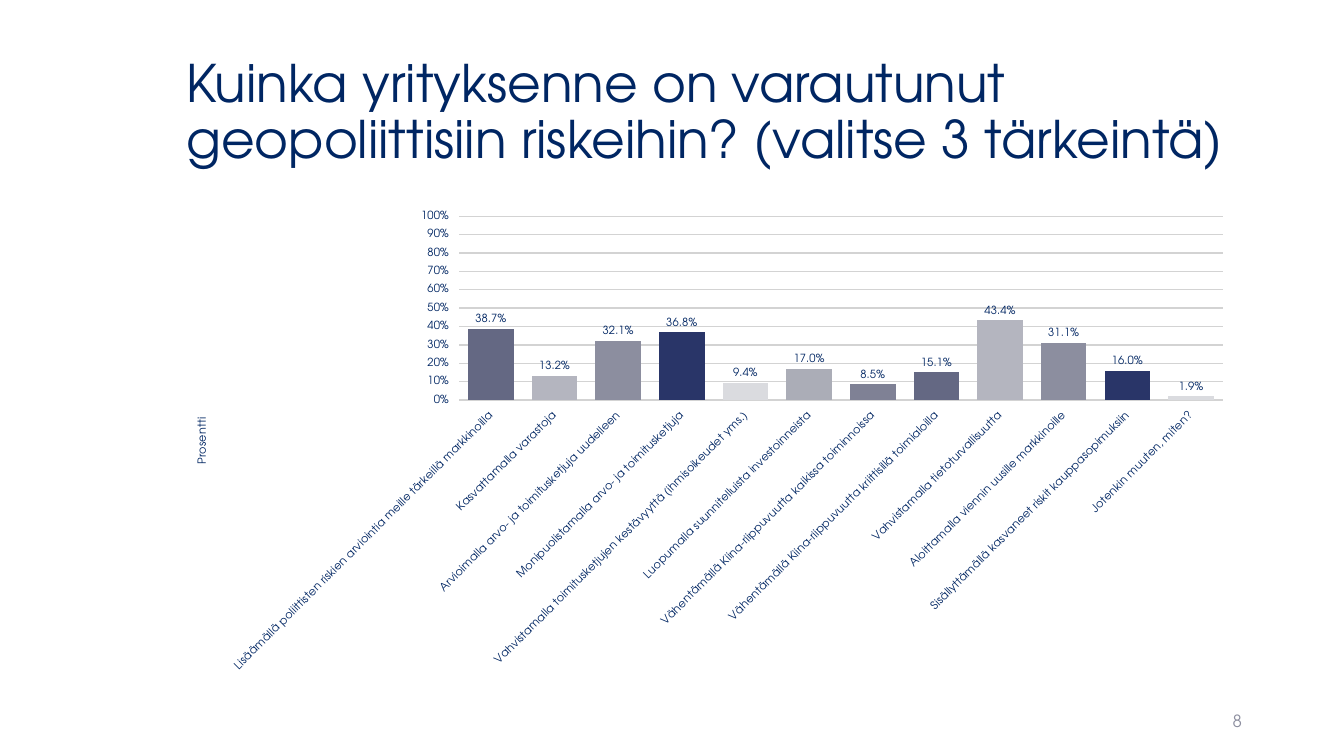
from lxml import etree
from pptx import Presentation
from pptx.chart.data import CategoryChartData
from pptx.dml.color import RGBColor
from pptx.enum import chart as ch, text as tx
from pptx.oxml.ns import qn
from pptx.util import Cm, Pt

FACE = "TeX Gyre Adventor"
NAVY, GREY, GRID = "002663", "8C8E9F", "D3D3D3"
WIDE, HIGH = 26.9, 12.09
BARS = [
    ("Lisäämällä poliittisten riskien arviointia meille tärkeillä markkinoilla", 0.387, "646883"),
    ("Kasvattamalla varastoja", 0.132, "B4B5BF"),
    ("Arvioimalla arvo- ja toimitusketjuja uudelleen", 0.321, "8C8E9F"),
    ("Monipuolistamalla arvo- ja toimitusketjuja", 0.368, "293568"),
    ("Vahvistamalla toimitusketjujen kestävyyttä (ihmisoikeudet yms.)", 0.094, "DADBDF"),
    ("Luopumalla suunnitelluista investoinneista", 0.17, "ABADB7"),
    ("Vähentämällä Kiina-riippuvuutta kaikissa toiminnoissa", 0.085, "7F8195"),
    ("Vähentämällä Kiina-riippuvuutta kriittisillä toimialoilla", 0.151, "646883"),
    ("Vahvistamalla tietoturvallisuutta", 0.434, "B4B5BF"),
    ("Aloittamalla viennin uusille markkinoille", 0.311, "8C8E9F"),
    ("Sisällyttämällä kasvaneet riskit kauppasopimuksiin", 0.16, "293568"),
    ("Jotenkin muuten, miten?", 0.019, "DADBDF"),
]


def paint(hue):
    """Turn a hex string into a colour."""
    return RGBColor.from_string(hue)


def style(font, size, hue=NAVY):
    """Set the face, size and colour of a font."""
    font.name, font.size, font.bold = FACE, Pt(size), False
    font.color.rgb = paint(hue)


def write(slide, words, box, size, hue=NAVY, align=tx.PP_ALIGN.LEFT, lines=1.0, after=0):
    """Add a wrapped text box, centred vertically."""
    frame = slide.shapes.add_textbox(*map(Cm, box)).text_frame
    frame.word_wrap = True
    frame.vertical_anchor = tx.MSO_ANCHOR.MIDDLE
    para = frame.paragraphs[0]
    para.alignment, para.line_spacing, para.space_after = align, lines, Pt(after)
    run = para.add_run()
    run.text = words
    style(run.font, size, hue)


def place(node, index, left, top, size=None):
    """Fix the layout of a chart part, in centimetres from the chart corner."""
    for old in node.findall(qn("c:layout")):
        node.remove(old)
    layout = etree.Element(qn("c:layout"))
    node.insert(index, layout)
    manual = etree.SubElement(layout, qn("c:manualLayout"))
    parts = {"layoutTarget": "inner"} if size else {}
    parts.update(xMode="edge", yMode="edge", x=left / WIDE, y=top / HIGH)
    if size:
        parts.update(w=size[0] / WIDE, h=size[1] / HIGH)
    for name, value in parts.items():
        etree.SubElement(manual, qn("c:" + name)).set("val", str(value))


def trim(axis):
    """Style an axis with small labels, outer ticks and no line."""
    style(axis.tick_labels.font, 8)
    axis.format.line.fill.background()
    axis.major_tick_mark = ch.XL_TICK_MARK.OUTSIDE
    axis.minor_tick_mark = ch.XL_TICK_MARK.NONE


def scale(axis):
    """Set the percent scale, its grid and its title."""
    trim(axis)
    axis.minimum_scale, axis.maximum_scale, axis.major_unit = 0, 1, 0.1
    axis.tick_labels.number_format = "0%"
    axis.tick_labels.number_format_is_linked = False
    line = axis.major_gridlines.format.line
    line.color.rgb, line.width = paint(GRID), Pt(1)
    title = axis.axis_title
    run = title.text_frame.paragraphs[0].add_run()
    run.text = "Prosentti"
    style(run.font, 8)
    body = title.text_frame._txBody.bodyPr
    body.set("rot", "-5400000")
    body.set("vert", "horz")
    place(title._element, 1, 0.44, 5.39)


def label(plot):
    """Show the value above each bar."""
    plot.has_data_labels = True
    tags = plot.data_labels
    tags.show_value = True
    tags.number_format, tags.number_format_is_linked = "0.0%", False
    tags.position = ch.XL_LABEL_POSITION.OUTSIDE_END
    style(tags.font, 8)


def graph(slide, left, top):
    """Add the column chart of the answers."""
    data = CategoryChartData(number_format="0.0%")
    data.categories = [name for name, _, _ in BARS]
    data.add_series("Series 1", [value for _, value, _ in BARS])
    kind = ch.XL_CHART_TYPE.COLUMN_CLUSTERED
    box = map(Cm, (left, top, WIDE, HIGH))
    chart = slide.shapes.add_chart(kind, *box, data).chart
    style(chart.font, 18)
    chart.has_legend = chart.has_title = False
    plot = chart.plots[0]
    plot.gap_width, plot.overlap, plot.vary_by_categories = 40, -2, False
    for index, (_, _, hue) in enumerate(BARS):
        fill = plot.series[0].points[index].format.fill
        fill.solid()
        fill.fore_color.rgb = paint(hue)
    label(plot)
    scale(chart.value_axis)
    names = chart.category_axis
    trim(names)
    names._element.find(qn("c:txPr")).find(qn("a:bodyPr")).set("rot", "-2700000")
    place(chart._chartSpace.chart.plotArea, 0, 7.12, 0.37, (19.25, 4.63))


def main():
    """Build the slide and save it."""
    deck = Presentation()
    deck.slide_width, deck.slide_height = Cm(33.87), Cm(19.05)
    slide = deck.slides.add_slide(deck.slide_layouts[6])
    write(slide, "Kuinka yrityksenne on varautunut geopoliittisiin riskeihin? (valitse 3 tärkeintä)",
          (4.45, 1.02, WIDE, 3.68), 37, lines=0.9)
    graph(slide, 4.45, 5.08)
    write(slide, "8", (23.93, 17.65, 7.62, 1.02), 12, GREY, tx.PP_ALIGN.RIGHT, after=6)
    deck.save("out.pptx")


if __name__ == "__main__":
    main()
